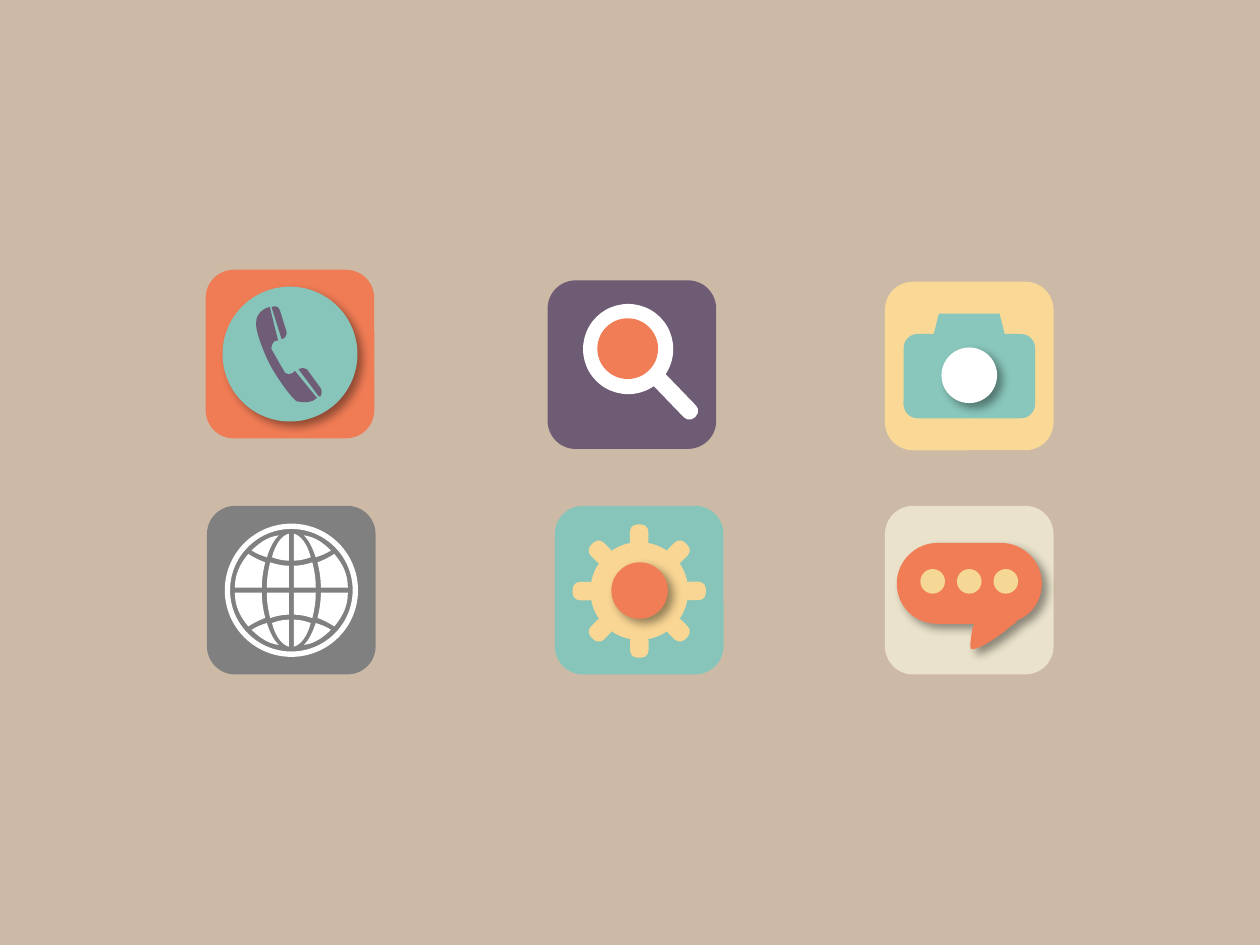
from dataclasses import dataclass
from itertools import product
from math import cos, radians, sin

from lxml.etree import SubElement
from pptx import Presentation
from pptx.dml.color import RGBColor
from pptx.enum.shapes import MSO_SHAPE
from pptx.oxml.ns import qn
from pptx.util import Cm, Pt


@dataclass(frozen=True)
class Theme:
    sand: str = "CCBAA6"
    orange: str = "F17D56"
    phone_orange: str = "F07C55"
    teal: str = "87C5BA"
    camera_teal: str = "89C7BC"
    plum: str = "6F5D78"
    dark_plum: str = "6E5C74"
    yellow: str = "FAD996"
    gear_yellow: str = "F9D694"
    dot_yellow: str = "F5D896"
    cream: str = "EAE2CB"
    grey: str = "808080"
    white: str = "FFFFFF"
    shadow: str = "000000"


THEME = Theme()
TILE = 2.55  # side of an icon tile in cm; parts are placed in hundredths of it

# Outlines: a pair is a line to that point, six numbers are a Bézier curve
HANDSET = [
    [(49, 62), (48, 62, 48, 62, 47, 61), (46, 59, 44, 56, 43, 54),
     (42, 52, 40, 49, 39, 47), (39, 45, 40, 42, 42, 42), (43, 42), (38, 22),
     (34, 23, 30, 26, 30, 31), (29, 34, 33, 46, 38, 56),
     (44, 67, 52, 77, 54, 78), (59, 79, 63, 79, 66, 76), (53, 60),
     (52, 61, 51, 62, 49, 62)],
    [(48, 37), (44, 24), (43, 22, 42, 21, 39, 22), (45, 41),
     (47, 41, 48, 39, 48, 37)],
    [(68, 70), (60, 59), (59, 58, 57, 58, 55, 59), (67, 75), (68, 75),
     (69, 74, 69, 71, 68, 70)],
]
BUBBLE = [(31, 22), (69, 22), (82, 22, 93, 33, 93, 46),
          (93, 56, 87, 65, 78, 68), (78, 69), (75, 71),
          (66, 79, 54, 86, 51, 85), (50, 84, 51, 78, 52, 72), (53, 70),
          (31, 70), (18, 70, 7, 60, 7, 46), (7, 33, 18, 22, 31, 22)]
# One quarter of the globe, measured from its centre
GLOBE_QUARTER = [
    [(12.5, 16.5), (9.5, 15.5, 5.5, 14.5, 1.5, 14.5), (1.5, 1.5), (14.5, 1.5),
     (14.5, 7.5, 13.5, 12.5, 12.5, 16.5)],
    [(1.5, 33.5), (1.5, 17.5), (5.5, 17.5, 8.5, 18.5, 11.5, 19.5),
     (9.5, 27.5, 5.5, 32.5, 1.5, 33.5)],
    [(23.5, 23.5), (19.5, 27.5, 14.5, 31.5, 7.5, 32.5),
     (10.5, 29.5, 12.5, 25.5, 14.5, 19.5),
     (17.5, 20.5, 20.5, 21.5, 23.5, 23.5)],
    [(17.5, 1.5), (33.5, 1.5), (33.5, 9.5, 30.5, 15.5, 25.5, 21.5),
     (22.5, 19.5, 18.5, 17.5, 15.5, 16.5),
     (16.5, 12.5, 17.5, 7.5, 17.5, 1.5)],
]


def paint(shape, color, shadow=False):
    shape.fill.solid()
    shape.fill.fore_color.rgb = RGBColor.from_string(color)
    shape.line.fill.background()
    shape.shadow.inherit = False
    if shadow:
        effects = shape._element.spPr.find(qn("a:effectLst"))
        outer = SubElement(effects, qn("a:outerShdw"), blurRad=str(Pt(4)),
                           dist=str(Pt(3)), dir="2700000", algn="tl",
                           rotWithShape="0")
        tint = SubElement(outer, qn("a:srgbClr"), val=THEME.shadow)
        SubElement(tint, qn("a:alpha"), val="40000")


class Icon:
    """A group of shapes on a rounded tile, at left and top in cm."""

    def __init__(self, page, left, top, color):
        self.left, self.top = left, top
        self.group = page.shapes.add_group_shape()
        self.add(MSO_SHAPE.ROUNDED_RECTANGLE, 0, 0, 100, 100, color)

    def point(self, x, y):
        return Cm(self.left + TILE * x / 100), Cm(self.top + TILE * y / 100)

    def add(self, kind, x, y, width, height, color, turn=0, adjust=None, shadow=False):
        shape = self.group.shapes.add_shape(
            kind, *self.point(x, y), Cm(TILE * width / 100), Cm(TILE * height / 100))
        shape.rotation = turn
        if adjust is not None:
            shape.adjustments[0] = adjust
        paint(shape, color, shadow)

    def disc(self, x, y, size, color, shadow=False):
        self.add(MSO_SHAPE.OVAL, x, y, size, size, color, shadow=shadow)

    def outline(self, outline, color, shadow=False):
        ends = [self.point(*part[-2:]) for part in outline]
        builder = self.group.shapes.build_freeform(*ends[0])
        builder.add_line_segments(ends[1:], close=True)
        shape = builder.convert_to_shape()
        # Bend the lines that stand for curves
        lines = list(shape._element.iter(qn("a:lnTo")))
        for line, part in zip(lines, outline[1:]):
            if len(part) == 6:
                line.tag = qn("a:cubicBezTo")
                for index, pair in enumerate((part[0:2], part[2:4])):
                    x, y = self.point(*pair)
                    control = SubElement(line, qn("a:pt"), x=str(x - shape.left),
                                         y=str(y - shape.top))
                    line.insert(index, control)
        paint(shape, color, shadow)


def phone_icon(page, left, top):
    icon = Icon(page, left, top, THEME.phone_orange)
    icon.disc(10, 10, 80, THEME.teal, shadow=True)
    for piece in HANDSET:
        icon.outline(piece, THEME.plum)


def search_icon(page, left, top):
    icon = Icon(page, left, top, THEME.dark_plum)
    icon.disc(21, 14, 53.5, THEME.white)
    icon.disc(29.5, 22.5, 36, THEME.orange)
    icon.add(MSO_SHAPE.ROUNDED_RECTANGLE, 70, 50, 10, 36, THEME.white,
             turn=-44, adjust=0.44)


def camera_icon(page, left, top):
    icon = Icon(page, left, top, THEME.yellow)
    icon.add(MSO_SHAPE.ROUNDED_RECTANGLE, 11, 31, 78, 50, THEME.camera_teal)
    icon.add(MSO_SHAPE.TRAPEZOID, 28, 19, 44, 16, THEME.camera_teal)
    icon.disc(33.5, 39, 33, THEME.white, shadow=True)


def globe_icon(page, left, top):
    icon = Icon(page, left, top, THEME.grey)
    icon.add(MSO_SHAPE.DONUT, 10.5, 10.5, 79, 79, THEME.white, adjust=0.04)
    # The quarter is mirrored across both axes
    for cell, across, down in product(GLOBE_QUARTER, (1, -1), (1, -1)):
        signs = (across, down) * 3
        icon.outline([tuple(50 + sign * value for sign, value in zip(signs, part))
                      for part in cell], THEME.white)


def gear_icon(page, left, top):
    icon = Icon(page, left, top, THEME.teal)
    icon.disc(21, 21.5, 58, THEME.gear_yellow)
    # Eight teeth around the wheel
    for turn in range(0, 360, 45):
        x = 50 + 32.5 * sin(radians(turn))
        y = 50.5 - 32.5 * cos(radians(turn))
        icon.add(MSO_SHAPE.ROUNDED_RECTANGLE, x - 5.5, y - 7, 11, 14,
                 THEME.gear_yellow, turn=turn, adjust=0.39)
    icon.disc(33.5, 33.5, 33.5, THEME.orange, shadow=True)


def chat_icon(page, left, top):
    icon = Icon(page, left, top, THEME.cream)
    icon.outline(BUBBLE, THEME.orange, shadow=True)
    for dot in range(3):
        icon.disc(21 + 21.7 * dot, 37.5, 14.6, THEME.dot_yellow)


def main():
    deck = Presentation()
    deck.slide_width, deck.slide_height = Cm(19.05), Cm(14.29)
    page = deck.slides.add_slide(deck.slide_layouts[6])
    page.background.fill.solid()
    page.background.fill.fore_color.rgb = RGBColor.from_string(THEME.sand)

    # Upper row
    phone_icon(page, 3.11, 4.08)
    search_icon(page, 8.28, 4.24)
    camera_icon(page, 13.38, 4.26)
    # Lower row
    lower = 7.65
    globe_icon(page, 3.13, lower)
    gear_icon(page, 8.39, lower)
    chat_icon(page, 13.38, lower)

    deck.save("out.pptx")


if __name__ == "__main__":
    main()
